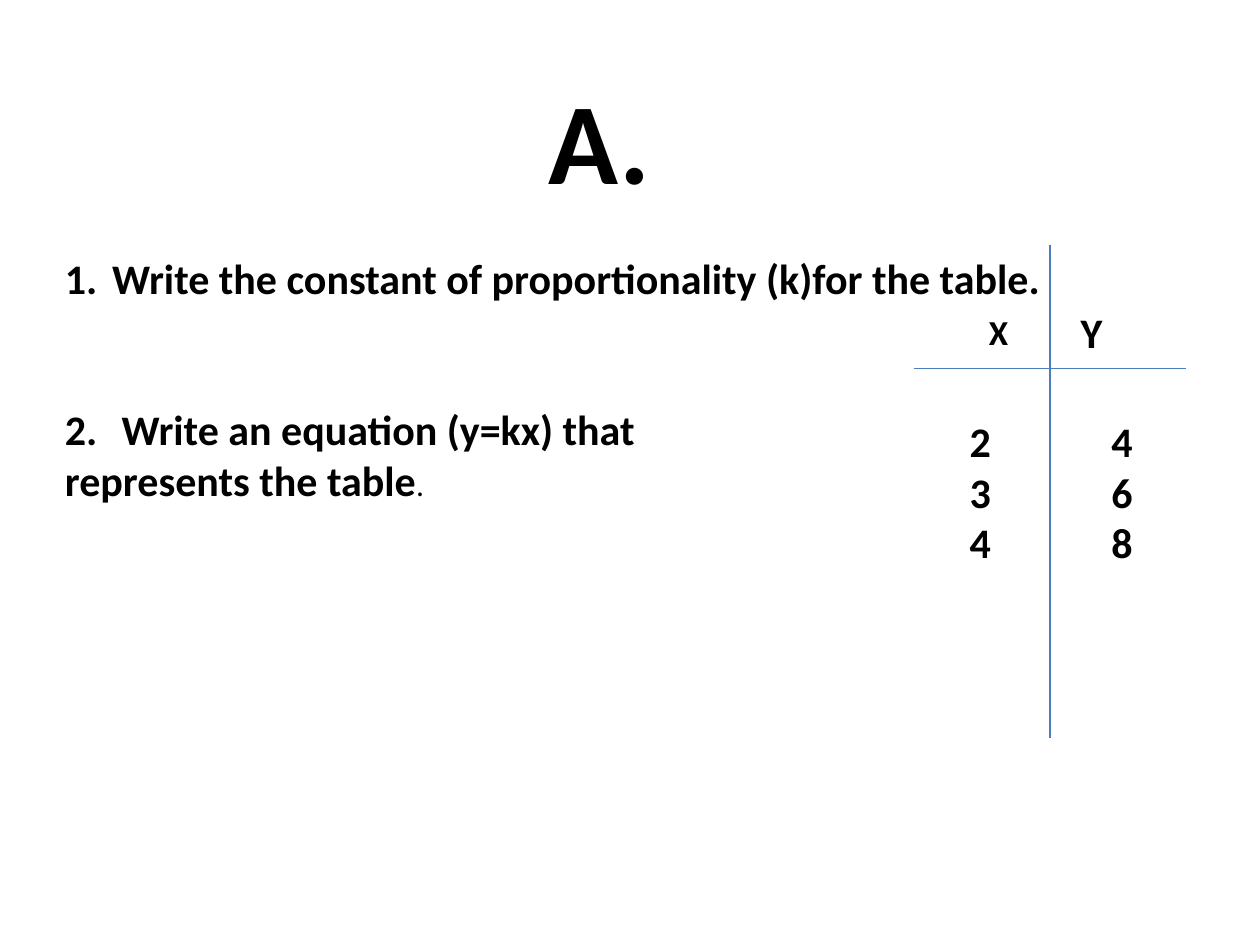
from lxml import etree
from pptx import Presentation
from pptx import util as u
from pptx.dml.color import RGBColor
from pptx.enum import shapes, text
from pptx.oxml.ns import qn

Pt = u.Pt
INK, BLUE = "000000", "4B7EBC"


def paint(hue):
    return RGBColor.from_string(hue)


def run(para, words, size=24, bold=True):
    part = para.add_run()
    part.text = words
    font = part.font
    font.name, font.size, font.bold = "Calibri", Pt(size), bold
    font.color.rgb = paint(INK)


def frame(shape):
    body = shape.text_frame
    body.word_wrap = True
    body.auto_size = text.MSO_AUTO_SIZE.NONE
    body.vertical_anchor = text.MSO_ANCHOR.TOP
    return body


def box(slide, x, y, w, h):
    return frame(slide.shapes.add_textbox(Pt(x), Pt(y), Pt(w), Pt(h)))


def number(para, style, start, indent):
    props = para._p.get_or_add_pPr()
    props.set("marL", str(Pt(indent)))
    props.set("indent", str(-Pt(indent)))
    etree.SubElement(props, qn("a:buFont"), typeface="+mj-lt")
    etree.SubElement(props, qn("a:buAutoNum"), type=style, startAt=str(start))


def rule(slide, x1, y1, x2, y2):
    line = slide.shapes.add_connector(
        shapes.MSO_CONNECTOR.STRAIGHT, Pt(x1), Pt(y1), Pt(x2), Pt(y2))
    line.line.color.rgb = paint(BLUE)
    line.line.width = Pt(0.75)
    etree.SubElement(line._element.spPr, qn("a:effectLst"))


def heading(slide, x, y, w, h):
    title = slide.shapes.title
    title.left, title.top, title.width, title.height = Pt(x), Pt(y), Pt(w), Pt(h)
    para = frame(title).paragraphs[0]
    para.alignment = text.PP_ALIGN.LEFT
    run(para, "A.", 66)


def tasks(slide, x, y, w, h):
    body = box(slide, x, y, w, h)
    first = body.paragraphs[0]
    number(first, "arabicPeriod", 1, 27)
    run(first, "Write the constant of proportionality (k)for the table.")
    second = body.add_paragraph()
    second.space_before = Pt(58)
    number(second, "arabicPeriod", 2, 27)
    run(second, " Write an equation (y=kx) that")
    last = body.add_paragraph()
    run(last, "represents the table")
    run(last, ".", 18, False)


def chart(slide, x, y, w, h):
    rule(slide, x, y + 70.5, x + w, y + 70.5)
    rule(slide, x + w / 2, y, x + w / 2, y + h)
    for name, dx, dy, size in (("X", 36, 34, 20), ("Y", 88.5, 31.5, 24)):
        head = box(slide, x + dx, y + dy, 33, 36)
        run(head.paragraphs[0], name, size)
    body = box(slide, x + 25, y + 94, 126, 94.5)
    for i, value in enumerate(("4", "6", "8")):
        para = body.add_paragraph() if i else body.paragraphs[0]
        number(para, "arabicPlain", 2, 81)
        run(para, value)


def main():
    deck = Presentation()
    deck.slide_width, deck.slide_height = Pt(720), Pt(540)
    slide = deck.slides.add_slide(deck.slide_layouts[5])
    heading(slide, 306.5, 36, 90, 87)
    chart(slide, 522, 140, 156, 282)
    tasks(slide, 30, 140.5, 642, 152.5)
    deck.save("out.pptx")


if __name__ == "__main__":
    main()
